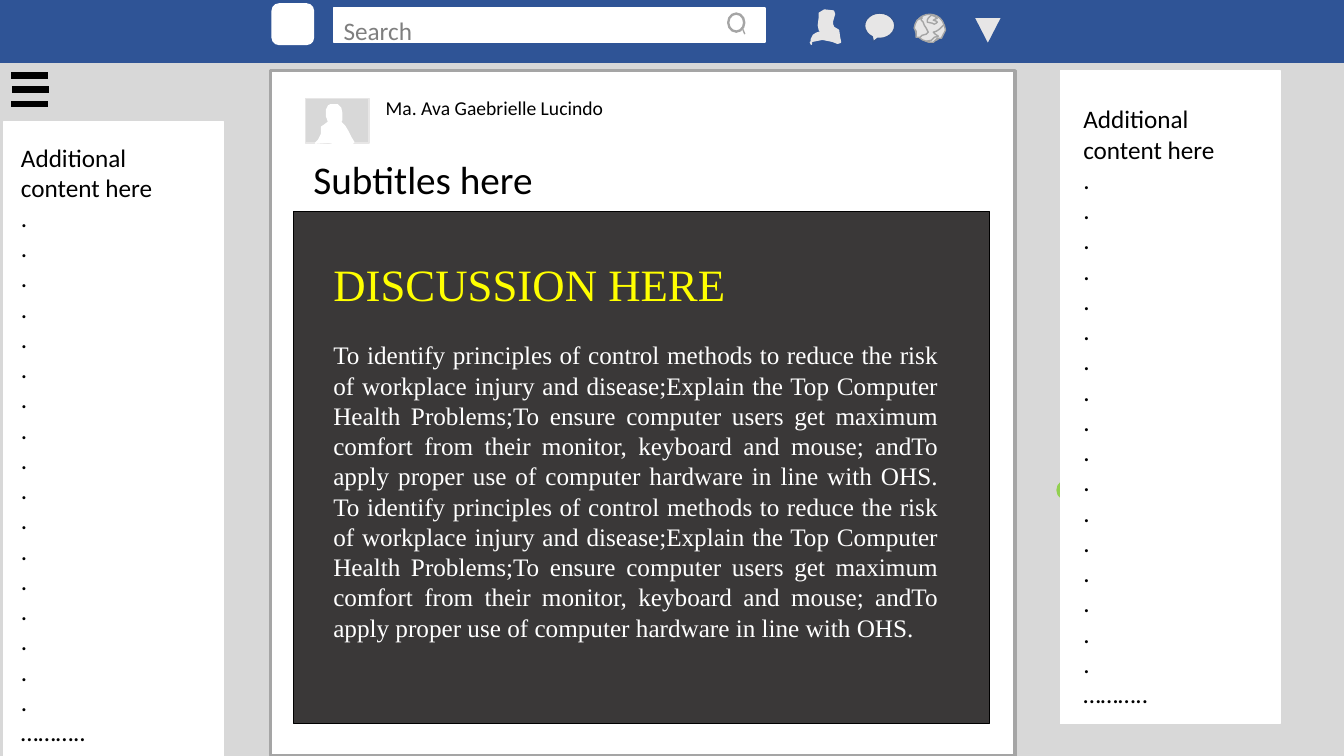
from dataclasses import dataclass

from lxml import etree
from pptx import Presentation
from pptx.dml.color import RGBColor
from pptx.enum.shapes import MSO_CONNECTOR, MSO_SHAPE
from pptx.enum.text import MSO_ANCHOR, MSO_AUTO_SIZE, PP_ALIGN
from pptx.oxml.ns import qn
from pptx.util import Cm, Pt

RECT = MSO_SHAPE.RECTANGLE
ROUNDED = MSO_SHAPE.ROUNDED_RECTANGLE
OVAL = MSO_SHAPE.OVAL
DONUT = MSO_SHAPE.DONUT
BUBBLE = MSO_SHAPE.OVAL_CALLOUT
TRIANGLE = MSO_SHAPE.ISOSCELES_TRIANGLE
STRAIGHT = MSO_CONNECTOR.STRAIGHT
TOP = MSO_ANCHOR.TOP
FIT_TEXT = MSO_AUTO_SIZE.SHAPE_TO_FIT_TEXT
LEFT, JUSTIFY = PP_ALIGN.LEFT, PP_ALIGN.JUSTIFY


@dataclass(frozen=True)
class Theme:
    page: str = "D8D8D8"
    white: str = "FFFFFF"
    black: str = "000000"
    header: str = "2F5496"
    board: str = "3A3838"
    icon: str = "E7E6E6"
    outline: str = "A5A5A5"
    lens: str = "AEABAB"
    bubble_line: str = "31538F"
    online: str = "92D050"
    hint: str = "7F7F7F"
    heading: str = "FFFF00"
    sans: str = "Calibri"
    serif: str = "Times New Roman"
    heading_size: int = 32
    subtitle_size: int = 28
    body_size: int = 18
    name_size: int = 14


THEME = Theme()
OUTLINE_UNIT = Cm(0.0254)  # drawing unit of the hand-drawn outlines

OBJECTIVES = (
    "To identify principles of control methods to reduce the risk of workplace "
    "injury and disease;Explain the Top Computer Health Problems;To ensure "
    "computer users get maximum comfort from their monitor, keyboard and mouse; "
    "andTo apply proper use of computer hardware in line with OHS."
)
SIDE_NOTES = ["Additional content here"] + ["."] * 17 + ["……….."]

AVATAR = [
    (313, 142), (316, 139), (319, 133), (319, 126), (322, 124), (326, 121),
    (324, 115), (324, 109), (326, 105), (328, 104), (335, 104), (338, 107),
    (339, 112), (339, 119), (338, 121), (342, 125), (345, 130), (348, 136),
    (351, 141), (350, 142), (341, 143), (335, 143), (330, 142), (326, 141),
]
FRIEND = [
    (805, 44), (805, 39), (807, 35), (810, 33), (816, 31), (813, 30),
    (812, 25), (813, 17), (813, 13), (818, 10), (827, 11), (828, 14),
    (826, 21), (826, 24), (827, 27), (832, 30), (833, 37), (834, 42),
    (831, 43), (826, 41), (816, 39), (806, 41), (804, 42),
]
CONTINENTS = [
    [(914, 17), (914, 20), (916, 22), (917, 25), (919, 28), (921, 32),
     (919, 34), (915, 35), (913, 37), (909, 37), (909, 31), (907, 28),
     (908, 24), (910, 20), (912, 19), (915, 18)],
    [(924, 15), (921, 18), (920, 20), (920, 22), (925, 23), (927, 24.5),
     (929, 23), (930, 22), (929, 21), (926, 20), (928, 19), (930, 18),
     (927, 16)],
    [(936, 25), (934, 27), (932, 29), (929, 31), (926, 32), (928, 34),
     (931, 36), (927, 37), (924, 40), (919, 41), (922, 42), (926, 42),
     (930, 38), (934, 38), (936, 34), (938, 30), (937, 25)],
]


def paint(shape, fill, line=None, width=1):
    shape.shadow.inherit = False
    shape.fill.solid()
    shape.fill.fore_color.rgb = RGBColor.from_string(fill)
    if line:
        shape.line.color.rgb = RGBColor.from_string(line)
        shape.line.width = Pt(width)
    else:
        shape.line.fill.background()
    return shape


def add_box(shapes, kind, left, top, width, height, fill, line=None,
            line_width=1, adjust=()):
    box = shapes.add_shape(kind, Cm(left), Cm(top), Cm(width), Cm(height))
    for index, value in enumerate(adjust):
        box.adjustments[index] = value
    return paint(box, fill, line, line_width)


def add_outline(shapes, points, fill, line):
    start, *rest = points
    builder = shapes.build_freeform(*start, scale=OUTLINE_UNIT)
    builder.add_line_segments(rest, close=True)
    return paint(builder.convert_to_shape(), fill, line)


def add_stroke(shapes, x1, y1, x2, y2, color, width):
    stroke = shapes.add_connector(STRAIGHT, Cm(x1), Cm(y1), Cm(x2), Cm(y2))
    stroke.line.color.rgb = RGBColor.from_string(color)
    stroke.line.width = Pt(width)
    etree.SubElement(stroke.element.spPr, qn("a:effectLst"))


def write(paragraph, text, size=THEME.body_size, font=THEME.sans,
          color=THEME.black, align=LEFT, after=0):
    paragraph.alignment = align
    paragraph.space_after = Cm(after)
    run = paragraph.add_run()
    run.text = text
    run.font.size = Pt(size)
    run.font.name = font
    run.font.color.rgb = RGBColor.from_string(color)


def add_text(shapes, left, top, width, height, *lines, **text_format):
    """Each line is a string, or a (string, format overrides) pair."""
    box = shapes.add_textbox(Cm(left), Cm(top), Cm(width), Cm(height))
    frame = box.text_frame
    frame.word_wrap = True
    frame.auto_size = FIT_TEXT
    frame.vertical_anchor = TOP
    for index, line in enumerate(lines):
        text, overrides = (line, {}) if isinstance(line, str) else line
        paragraph = frame.add_paragraph() if index else frame.paragraphs[0]
        write(paragraph, text, **{**text_format, **overrides})


def add_post(shapes):
    add_box(shapes, RECT, 6.81, 1.78, 18.77, 17.27, THEME.white, THEME.outline, 2.25)
    add_box(shapes, RECT, 7.7, 2.49, 1.6, 1.12, THEME.page, THEME.icon)
    add_outline(shapes, AVATAR, THEME.white, THEME.white)
    add_text(shapes, 7.65, 3.78, 14.91, 1.47, "Subtitles here",
             size=THEME.subtitle_size)
    add_text(shapes, 9.47, 2.29, 11.84, 0.84, "Ma. Ava Gaebrielle Lucindo",
             size=THEME.name_size)
    add_box(shapes, RECT, 7.39, 5.33, 17.55, 12.9, THEME.board, THEME.black)
    heading = ("DISCUSSION HERE",
               dict(size=THEME.heading_size, color=THEME.heading, after=0.73))
    add_text(shapes, 8.15, 6.35, 15.75, 10.92, heading,
             " ".join([OBJECTIVES] * 2),
             font=THEME.serif, color=THEME.white, align=JUSTIFY)


def add_header(shapes):
    add_box(shapes, RECT, 0, 0, 33.87, 1.57, THEME.header, THEME.header)
    add_box(shapes, ROUNDED, 6.86, 0.1, 1.04, 1.02, THEME.white, THEME.white)
    # Search field
    add_box(shapes, RECT, 8.41, 0.2, 10.87, 0.86, THEME.white, THEME.white)
    add_text(shapes, 8.41, 0.25, 5.16, 1.04, "Search", color=THEME.hint)
    add_box(shapes, DONUT, 18.34, 0.33, 0.43, 0.48, THEME.lens, THEME.outline,
            adjust=(0.06,))
    add_stroke(shapes, 18.72, 0.74, 18.77, 0.86, THEME.outline, 1)
    # Friend, message, globe and menu icons
    add_outline(shapes, FRIEND, THEME.icon, THEME.icon)
    add_box(shapes, BUBBLE, 21.79, 0.33, 0.76, 0.64, THEME.icon,
            THEME.bubble_line, adjust=(-0.21, 0.63))
    globe = shapes.add_group_shape().shapes
    add_box(globe, OVAL, 23.06, 0.36, 0.74, 0.69, THEME.icon, THEME.outline)
    for continent in CONTINENTS:
        add_outline(globe, continent, THEME.icon, THEME.outline)
    menu = add_box(shapes, TRIANGLE, 24.54, 0.43, 0.71, 0.69, THEME.icon, THEME.header)
    menu.rotation = 180


def add_side_panel(shapes, left, top, height, text_left, text_top):
    add_box(shapes, RECT, left, top, 5.54, height, THEME.white, THEME.white)
    add_text(shapes, text_left, text_top, 4.95, 15.75, *SIDE_NOTES)


def main():
    deck = Presentation()
    deck.slide_width, deck.slide_height = Cm(33.87), Cm(19.05)
    slide = deck.slides.add_slide(deck.slide_layouts[6])
    slide.background.fill.solid()
    slide.background.fill.fore_color.rgb = RGBColor.from_string(THEME.page)
    shapes = slide.shapes

    add_post(shapes)
    # Right panel over the online mark
    add_box(shapes, OVAL, 26.64, 12.12, 0.41, 0.46, THEME.online, THEME.online)
    add_side_panel(shapes, 26.72, 1.78, 16.46, 27.05, 2.49)
    add_header(shapes)
    # Menu bars and left panel
    for bar, left in enumerate((0.28, 0.3, 0.28)):
        y = 1.9 + 0.36 * bar
        add_stroke(shapes, left, y, left + 0.94, y, THEME.black, 4.5)
    add_side_panel(shapes, 0.1, 3.07, 15.98, 0.28, 3.45)

    deck.save("out.pptx")


if __name__ == "__main__":
    main()
